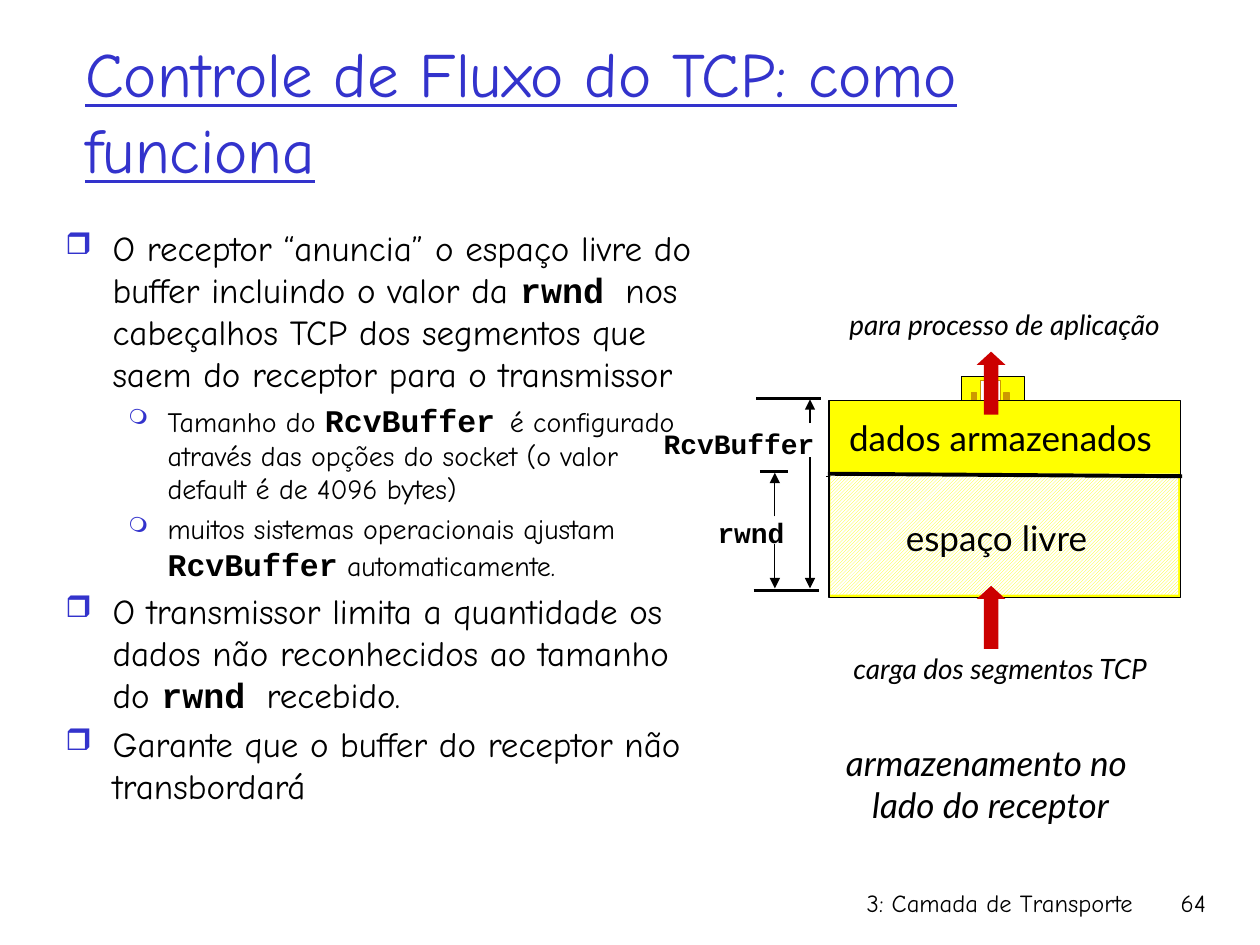
"""Build the slide on TCP flow control with its receive buffer diagram."""
from typing import NamedTuple, Optional

from lxml import etree
from pptx import Presentation
from pptx.dml.color import RGBColor
from pptx.enum.dml import MSO_PATTERN
from pptx.enum.shapes import MSO_CONNECTOR, MSO_SHAPE
from pptx.enum.text import MSO_ANCHOR, MSO_AUTO_SIZE, PP_ALIGN
from pptx.oxml.ns import qn
from pptx.util import Cm, Pt

LEFT, CENTER, RIGHT = PP_ALIGN.LEFT, PP_ALIGN.CENTER, PP_ALIGN.RIGHT
TOP, MIDDLE = MSO_ANCHOR.TOP, MSO_ANCHOR.MIDDLE
RECTANGLE, UP_ARROW = MSO_SHAPE.RECTANGLE, MSO_SHAPE.UP_ARROW
STRAIGHT = MSO_CONNECTOR.STRAIGHT
HATCH = MSO_PATTERN.DARK_UPWARD_DIAGONAL
FIT_SHAPE = MSO_AUTO_SIZE.SHAPE_TO_FIT_TEXT

BLACK = RGBColor(0x00, 0x00, 0x00)
WHITE = RGBColor(0xFF, 0xFF, 0xFF)
BLUE = RGBColor(0x33, 0x33, 0xCC)
YELLOW = RGBColor(0xFF, 0xFF, 0x00)
GOLD = RGBColor(0xCC, 0x99, 0x00)
RED = RGBColor(0xCC, 0x00, 0x00)

COMIC, COURIER, LATO, MONO = "Comic Neue", "Courier New", "Lato", "Noto Sans Mono"


class Box(NamedTuple):
    left: float
    top: float
    width: float
    height: float


class Block(NamedTuple):
    box: Box
    fill: RGBColor
    outline: Optional[RGBColor] = None
    kind: MSO_SHAPE = RECTANGLE


class Rule(NamedTuple):
    x1: float
    y1: float
    x2: float
    y2: float
    weight: float = 0.75
    arrow: bool = False


class Label(NamedTuple):
    box: Box
    lines: list
    size: float
    font: str = LATO
    align: PP_ALIGN = CENTER
    bold: bool = False
    italic: bool = False


class Run(NamedTuple):
    text: str
    size: float
    font: str = COMIC
    bold: bool = False


class Level(NamedTuple):
    bullet: str
    bullet_size: int
    margin: float
    hanging: float
    space: float


class Item(NamedTuple):
    level: Level
    runs: list


POINT = Level("❒", 85, 0.95, 0.95, 4)
SUBPOINT = Level("❍", 75, 2.06, 0.79, 3.2)

ITEMS = [
    Item(POINT, [
        Run("O receptor “anuncia” o espaço livre do buffer incluindo o valor da ", 20),
        Run("rwnd ", 20, COURIER, True),
        Run("nos cabeçalhos TCP dos segmentos que saem do receptor para o transmissor", 20)]),
    Item(SUBPOINT, [
        Run("Tamanho do ", 16),
        Run("RcvBuffer", 18, COURIER, True),
        Run(" ", 14, MONO),
        Run("é configurado através das opções do socket (o valor default é de 4096 bytes)", 16)]),
    Item(SUBPOINT, [
        Run("muitos sistemas operacionais ajustam ", 16),
        Run("RcvBuffer", 18, COURIER, True),
        Run(" automaticamente.", 16)]),
    Item(POINT, [
        Run("O transmissor limita a quantidade os dados não reconhecidos ao tamanho do ", 20),
        Run("rwnd ", 20, COURIER, True),
        Run("recebido.", 20)]),
    Item(POINT, [Run("Garante que o buffer do receptor não transbordará", 20)]),
]

PROCESS_AND_BUFFER = [
    Block(Box(19.38, 7.59, 1.27, 0.58), YELLOW, BLACK),
    Block(Box(19.76, 7.67, 0.41, 0.43), WHITE, GOLD),
    Block(Box(20.24, 7.92, 0.1, 0.15), GOLD, GOLD),
    Block(Box(19.58, 7.92, 0.1, 0.15), GOLD, GOLD),
    Block(Box(16.71, 8.08, 7.09, 3.96), YELLOW, BLACK),
]
FREE_SPACE = Block(Box(16.74, 9.55, 7.01, 2.44), YELLOW)
FLOW_OUT, FLOW_IN = [
    Block(Box(19.69, top, 0.58, 1.27), RED, None, UP_ARROW) for top in (7.09, 11.81)]

THIN_DIVIDER = Rule(16.66, 9.6, 23.8, 9.6)
THICK_DIVIDER = Rule(16.69, 9.55, 23.83, 9.6, 2.25)
RWND_X, BUFFER_X, BOTTOM = 15.62, 16.33, 11.86
DIMENSIONS = [
    Rule(RWND_X, 10.41, RWND_X, 9.53, arrow=True),
    Rule(RWND_X, 10.97, RWND_X, BOTTOM, arrow=True),
    Rule(15.19, 11.91, 16.51, 11.91, 1.5),
    Rule(15.32, 9.5, 15.88, 9.5, 1.5),
    Rule(15.24, 8.03, 16.56, 8.03, 1.5),
    Rule(BUFFER_X, 8.53, BUFFER_X, 8.05, arrow=True),
    Rule(BUFFER_X, 9.22, BUFFER_X, BOTTOM, arrow=True),
]

LABELS = [
    Label(Box(16.79, 8.28, 6.76, 1.12), ["dados armazenados"], 20),
    Label(Box(17.98, 10.29, 4.22, 1.12), ["espaço livre"], 20),
    Label(Box(14.2, 10.26, 1.88, 0.94), ["rwnd"], 16, COURIER, bold=True),
    Label(Box(13.11, 8.48, 3.56, 0.94), ["RcvBuffer"], 16, COURIER, RIGHT, bold=True),
    Label(Box(16.66, 13, 7.01, 0.94), ["carga dos segmentos TCP"], 16, italic=True),
    Label(Box(16.61, 6.07, 7.29, 0.94), ["para processo de aplicação"], 16, italic=True),
    Label(Box(16.54, 14.83, 6.86, 1.96), ["armazenamento no ", "lado do receptor"], 20,
          italic=True),
]
FOOTERS = [
    (Box(15.04, 17.78, 8.05, 1.27), "3: Camada de Transporte"),
    (Box(22.68, 17.78, 1.88, 1.27), "64"),
]


def add_frame(slide, box: Box, wrap: bool = True, anchor: MSO_ANCHOR = TOP):
    frame = slide.shapes.add_textbox(*map(Cm, box)).text_frame
    frame.word_wrap = wrap
    frame.vertical_anchor = anchor
    if not wrap:
        frame.auto_size = FIT_SHAPE
    return frame


def add_paragraph(frame, index: int):
    return frame.add_paragraph() if index else frame.paragraphs[0]


def write(paragraph, text: str, *, size: float, font: str = COMIC, color: RGBColor = BLACK,
          bold: bool = False, italic: bool = False, underline: bool = False,
          align: PP_ALIGN = LEFT) -> None:
    paragraph.alignment = align
    run = paragraph.add_run()
    run.text = text
    style = run.font
    style.name, style.size, style.color.rgb = font, Pt(size), color
    style.bold, style.italic, style.underline = bold, italic, underline


def set_bullet(paragraph, level: Level) -> None:
    properties = paragraph._p.get_or_add_pPr()
    properties.set("marL", str(Cm(level.margin)))
    properties.set("indent", str(-Cm(level.hanging)))
    color = etree.SubElement(properties, qn("a:buClr"))
    etree.SubElement(color, qn("a:srgbClr"), val=str(BLUE))
    etree.SubElement(properties, qn("a:buSzPct"), val=str(level.bullet_size * 1000))
    etree.SubElement(properties, qn("a:buChar"), char=level.bullet)


def draw_items(slide, box: Box, items: list) -> None:
    frame = add_frame(slide, box)
    for index, item in enumerate(items):
        paragraph = add_paragraph(frame, index)
        set_bullet(paragraph, item.level)
        if index:
            paragraph.space_before = Pt(item.level.space)
        for run in item.runs:
            write(paragraph, run.text, size=run.size, font=run.font, bold=run.bold)


def draw_label(slide, label: Label) -> None:
    frame = add_frame(slide, label.box, wrap=False)
    for index, line in enumerate(label.lines):
        write(add_paragraph(frame, index), line, size=label.size, font=label.font,
              bold=label.bold, italic=label.italic, align=label.align)


def draw_block(slide, block: Block, hatched: bool = False) -> None:
    shape = slide.shapes.add_shape(block.kind, *map(Cm, block.box))
    shape.shadow.inherit = False
    if block.kind == UP_ARROW:
        shape.adjustments[1] = 0.46
    if hatched:
        shape.fill.patterned()
        shape.fill.pattern = HATCH
        shape.fill.fore_color.rgb, shape.fill.back_color.rgb = block.fill, WHITE
    else:
        shape.fill.solid()
        shape.fill.fore_color.rgb = block.fill
    if block.outline is None:
        shape.line.fill.background()
    else:
        shape.line.color.rgb = block.outline
        shape.line.width = Pt(0.75)


def draw_rule(slide, rule: Rule) -> None:
    connector = slide.shapes.add_connector(STRAIGHT, *map(Cm, rule[:4]))
    connector.line.color.rgb = BLACK
    connector.line.width = Pt(rule.weight)
    if rule.arrow:
        etree.SubElement(connector.line._get_or_add_ln(), qn("a:tailEnd"), type="triangle")
    etree.SubElement(connector._element.spPr, qn("a:effectLst"))


def main() -> None:
    deck = Presentation()
    deck.slide_width, deck.slide_height = Cm(25.4), Cm(19.05)
    slide = deck.slides.add_slide(deck.slide_layouts[6])

    title = add_frame(slide, Box(1.47, 0.64, 21.59, 3.18), anchor=MIDDLE)
    write(title.paragraphs[0], "Controle de Fluxo do TCP: como funciona", size=36,
          color=BLUE, underline=True)
    draw_items(slide, Box(1.07, 4.45, 13.13, 12.9), ITEMS)

    for block in PROCESS_AND_BUFFER:
        draw_block(slide, block)
    draw_rule(slide, THIN_DIVIDER)
    draw_block(slide, FLOW_OUT)
    draw_block(slide, FREE_SPACE, hatched=True)
    draw_block(slide, FLOW_IN)
    for rule in [THICK_DIVIDER, *DIMENSIONS]:
        draw_rule(slide, rule)
    for label in LABELS:
        draw_label(slide, label)
    for box, text in FOOTERS:
        write(add_frame(slide, box).paragraphs[0], text, size=14, align=RIGHT)

    deck.save("out.pptx")


if __name__ == "__main__":
    main()
